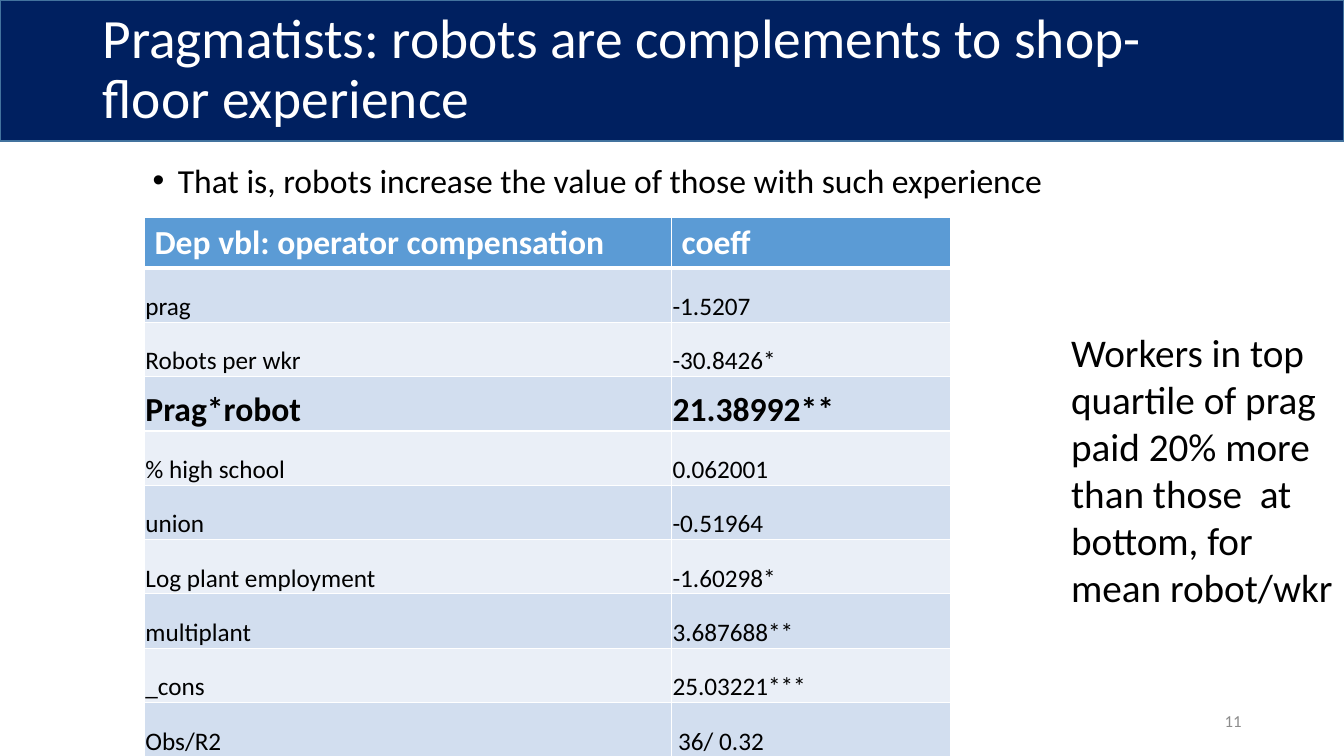
import pptx
import pptx.util
import pptx.dml.color
import pptx.enum.shapes
import pptx.enum.text
import pptx.oxml
import pptx.oxml.ns
from lxml import etree

Pt = pptx.util.Pt
Anchor = pptx.enum.text.MSO_ANCHOR
Align = pptx.enum.text.PP_ALIGN

ROWS = [
    ("Dep vbl: operator compensation", "coeff"),
    ("prag", "-1.5207"),
    ("Robots per wkr", "-30.8426*"),
    ("Prag*robot", "21.38992**"),
    ("% high school", "0.062001"),
    ("union", "-0.51964"),
    ("Log plant employment", "-1.60298*"),
    ("multiplant", "3.687688**"),
    ("_cons", "25.03221***"),
    ("Obs/R2", " 36/ 0.32"),
]
KEY_ROW = 3
SIDE_LINES = ["Workers in top", "quartile of prag", "paid 20% more",
              "than those  at", "bottom, for", "mean robot/wkr"]


def color(code):
    return pptx.dml.color.RGBColor.from_string(code)


def style(frame, size, code, bold=False):
    for para in frame.paragraphs:
        for run in para.runs:
            font = run.font
            font.name = "Calibri"
            font.size = Pt(size)
            font.bold = bold
            font.color.rgb = color(code)


def add_text(slide, box, text, size, code="000000", wrap=True):
    shape = slide.shapes.add_textbox(*[Pt(n) for n in box])
    frame = shape.text_frame
    frame.word_wrap = wrap
    frame.text = text
    style(frame, size, code)
    return frame


def add_band(slide):
    """Place the title band behind the title placeholder."""
    band = slide.shapes.add_shape(pptx.enum.shapes.MSO_SHAPE.RECTANGLE,
                                  0, 0, Pt(960), Pt(100.8))
    band.shadow.inherit = False
    band.fill.solid()
    band.fill.fore_color.rgb = color("002060")
    band.line.color.rgb = color("43739E")
    band.line.width = Pt(1)
    slide.shapes.title.element.addprevious(band.element)


def set_title(slide, text):
    title = slide.shapes.title
    title.left, title.top = Pt(66), Pt(11.5)
    title.width, title.height = Pt(828), Pt(121.7)
    frame = title.text_frame
    frame.text = text
    frame.word_wrap = True
    frame.auto_size = pptx.enum.text.MSO_AUTO_SIZE.NONE
    frame.vertical_anchor = Anchor.MIDDLE
    frame.margin_top, frame.margin_bottom = 0, Pt(44)
    para = frame.paragraphs[0]
    para.alignment = Align.LEFT
    para.line_spacing = 0.9
    style(frame, 39.6, "FFFFFF")


def add_bullet(para):
    props = para._p.get_or_add_pPr()
    props.set("marL", str(Pt(54)))
    props.set("indent", str(Pt(-18)))
    tag = pptx.oxml.ns.qn
    etree.SubElement(props, tag("a:buFont")).set("typeface", "Arial")
    etree.SubElement(props, tag("a:buChar")).set("char", "•")


def set_border(cell, base):
    """Draw white cell borders; base is the width of the bottom one."""
    props = cell._tc.get_or_add_tcPr()
    space = pptx.oxml.ns.nsdecls("a")
    widths = {"lnL": 1, "lnR": 1, "lnT": 1, "lnB": base}
    for spot, (name, width) in enumerate(widths.items()):
        props.insert(spot, pptx.oxml.parse_xml(
            f'<a:{name} {space} w="{Pt(width)}"><a:solidFill>'
            f'<a:srgbClr val="FFFFFF"/></a:solidFill></a:{name}>'))


def fill_cell(cell, text, row):
    head = row == 0
    cell.text = text
    cell.fill.solid()
    stripe = "D2DEEF" if row % 2 else "EAEFF7"
    cell.fill.fore_color.rgb = color("5B9BD5" if head else stripe)
    if not head:
        cell.vertical_anchor = Anchor.BOTTOM
        cell.margin_left = cell.margin_right = cell.margin_top = Pt(0.7)
        cell.margin_bottom = 0
    strong = row in (0, KEY_ROW)
    style(cell.text_frame, 24 if strong else 18,
          "FFFFFF" if head else "000000", strong)
    set_border(cell, 3 if head or row == 0 else 1)


def add_grid(slide):
    frame = slide.shapes.add_table(len(ROWS), 2, Pt(103.2), Pt(155.5),
                                   Pt(576), Pt(381.2))
    table = frame.table
    for col, width in zip(table.columns, (376.5, 199.5)):
        col.width = Pt(width)
    for row, texts in enumerate(ROWS):
        table.rows[row].height = Pt(38.8 if row else 32)
        for col, text in enumerate(texts):
            fill_cell(table.cell(row, col), text, row)


def main():
    deck = pptx.Presentation()
    deck.slide_width, deck.slide_height = Pt(960), Pt(540)
    slide = deck.slides.add_slide(deck.slide_layouts[5])
    add_band(slide)
    set_title(slide, "Pragmatists: robots are complements to shop-floor experience")

    point = add_text(
        slide, (66, 113.8, 828, 373),
        "That is, robots increase the value of those with such experience", 24)
    para = point.paragraphs[0]
    para.line_spacing = 0.9
    add_bullet(para)

    number = add_text(slide, (678, 500.5, 216, 28.8), "11", 12, "8C8C8C")
    number.vertical_anchor = Anchor.MIDDLE
    number.paragraphs[0].alignment = Align.RIGHT

    add_grid(slide)
    side = add_text(slide, (758, 231, 204, 211), "\n".join(SIDE_LINES), 28,
                    wrap=False)
    side.auto_size = pptx.enum.text.MSO_AUTO_SIZE.SHAPE_TO_FIT_TEXT
    deck.save("out.pptx")


if __name__ == "__main__":
    main()
